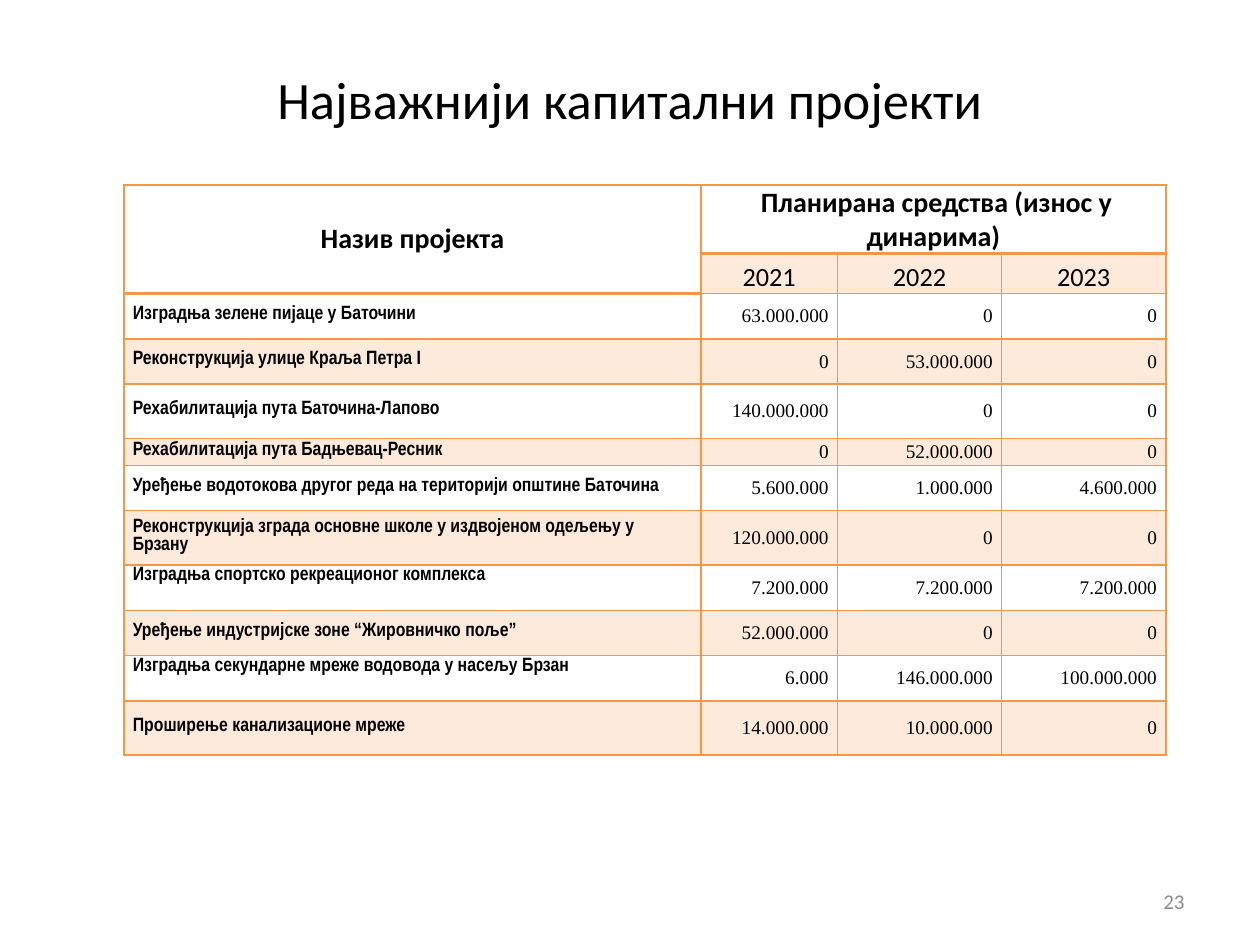
from dataclasses import dataclass

from lxml import etree
from pptx import Presentation
from pptx.dml.color import RGBColor
from pptx.enum.text import MSO_ANCHOR, PP_ALIGN
from pptx.oxml.ns import qn
from pptx.util import Pt

LEFT, MID, RIGHT = PP_ALIGN.LEFT, PP_ALIGN.CENTER, PP_ALIGN.RIGHT
TOP, CENTER, BOTTOM = MSO_ANCHOR.TOP, MSO_ANCHOR.MIDDLE, MSO_ANCHOR.BOTTOM
BLACK, GREY, ORANGE = "000000", "8C8C8C", "F79646"
TINT = 20
COLS = (329.8, 78, 93.8, 93.8)
HEADS = (39.5, 22.7)
YEARS = ("2021", "2022", "2023")


@dataclass
class Project:
    """One project with its yearly sums and row height."""
    name: str
    sums: tuple
    high: float = 25.9
    anchor: MSO_ANCHOR = CENTER


PROJECTS = (
    Project("Изградња зелене пијаце у Баточини", ("63.000.000", "0", "0")),
    Project("Реконструкција улице Краља Петра I", ("0", "53.000.000", "0")),
    Project("Рехабилитација пута Баточина-Лапово", ("140.000.000", "0", "0"), 31),
    Project("Рехабилитација пута Бадњевац-Ресник", ("0", "52.000.000", "0"), 15.5),
    Project("Уређење водотокова другог реда на територији општине Баточина",
            ("5.600.000", "1.000.000", "4.600.000")),
    Project("Реконструкција зграда основне школе у издвојеном одељењу у Брзану",
            ("120.000.000", "0", "0"), 31),
    Project("Изградња спортско рекреационог комплекса",
            ("7.200.000", "7.200.000", "7.200.000"), anchor=TOP),
    Project("Уређење индустријске зоне “Жировничко поље”", ("52.000.000", "0", "0")),
    Project("Изградња секундарне мреже водовода у насељу Брзан",
            ("6.000", "146.000.000", "100.000.000"), anchor=TOP),
    Project("Проширење канализационе мреже", ("14.000.000", "10.000.000", "0"), 31),
)


def paint(color, tone: str) -> None:
    """Set a colour from a hex string."""
    color.rgb = RGBColor.from_string(tone)


def write(frame, text: str, *, size: float, font: str = "Calibri", color: str = BLACK,
          bold: bool = False, align: PP_ALIGN = MID) -> None:
    """Put one formatted paragraph in a text frame."""
    frame.word_wrap = True
    para = frame.paragraphs[0]
    para.alignment = align
    run = para.add_run()
    run.text = text
    run.font.size, run.font.name, run.font.bold = Pt(size), font, bold
    paint(run.font.color, color)


def label(slide, box: tuple, text: str, **style) -> None:
    """Add a text box centred on its height."""
    frame = slide.shapes.add_textbox(*map(Pt, box)).text_frame
    frame.vertical_anchor = CENTER
    write(frame, text, **style)


def dress(cell, tint: bool, base: float) -> None:
    """Give a cell its fill, margins and borders."""
    cell.margin_left = cell.margin_right = Pt(5.1)
    cell.margin_top = cell.margin_bottom = 0
    props = cell._tc.get_or_add_tcPr()
    if tint:
        cell.fill.solid()
        paint(cell.fill.fore_color, ORANGE)
        tone = props.find(".//" + qn("a:srgbClr"))
        etree.SubElement(tone, qn("a:alpha"), val=str(TINT * 1000))
    else:
        cell.fill.background()
    for spot, (side, width) in enumerate(zip("LRTB", (1, 1, 1, base))):
        line = etree.Element(qn("a:ln" + side), w=str(Pt(width)))
        solid = etree.SubElement(line, qn("a:solidFill"))
        etree.SubElement(solid, qn("a:srgbClr"), val=ORANGE)
        props.insert(spot, line)


def fill_cell(cell, text: str, anchor: MSO_ANCHOR, **style) -> None:
    """Write a cell's text at the given anchor."""
    cell.vertical_anchor = anchor
    write(cell.text_frame, text, **style)


def draw_row(table, y: int, item: Project) -> None:
    """Write one project's name and sums."""
    name = table.cell(y, 0)
    if item.anchor == TOP:
        name.margin_top = Pt(1)
    else:
        name.margin_bottom = Pt(2)
    fill_cell(name, item.name, item.anchor, size=11, font="Arial Narrow",
              bold=True, align=LEFT)
    for x, value in enumerate(item.sums, 1):
        fill_cell(table.cell(y, x), value, CENTER, size=11,
                  font="Times New Roman", align=RIGHT)


def draw_table(slide) -> None:
    """Draw the table of projects and planned sums."""
    highs = HEADS + tuple(item.high for item in PROJECTS)
    box = (70.8, 105.6, sum(COLS), sum(highs))
    table = slide.shapes.add_table(len(highs), len(COLS), *map(Pt, box)).table
    table.first_row = table.horz_banding = False
    for col, wide in zip(table.columns, COLS):
        col.width = Pt(wide)
    for row, high in zip(table.rows, highs):
        row.height = Pt(high)
    for y in range(len(highs)):
        for x in range(len(COLS)):
            tint = y % 2 == 1 and (y > 1 or x > 0)
            thick = y == 0 or (y == 1 and x == 0)
            dress(table.cell(y, x), tint, 2 if thick else 1)
    table.cell(0, 0).merge(table.cell(1, 0))
    table.cell(0, 1).merge(table.cell(0, 3))
    fill_cell(table.cell(0, 0), "Назив пројекта", CENTER, size=16, bold=True)
    fill_cell(table.cell(0, 1), " Планирана средства (износ у динарима)", BOTTOM,
              size=16, bold=True)
    for x, year in enumerate(YEARS, 1):
        fill_cell(table.cell(1, x), year, BOTTOM, size=15)
    for y, item in enumerate(PROJECTS, len(HEADS)):
        draw_row(table, y, item)


def main() -> None:
    """Build and save the slide."""
    deck = Presentation()
    deck.slide_width, deck.slide_height = Pt(720), Pt(540)
    slide = deck.slides.add_slide(deck.slide_layouts[6])
    draw_table(slide)
    label(slide, (516, 500.5, 168, 28.8), "23", size=12, color=GREY, align=RIGHT)
    label(slide, (36, 21.6, 648, 69), "Најважнији капитални пројекти", size=30)
    deck.save("out.pptx")


if __name__ == "__main__":
    main()
